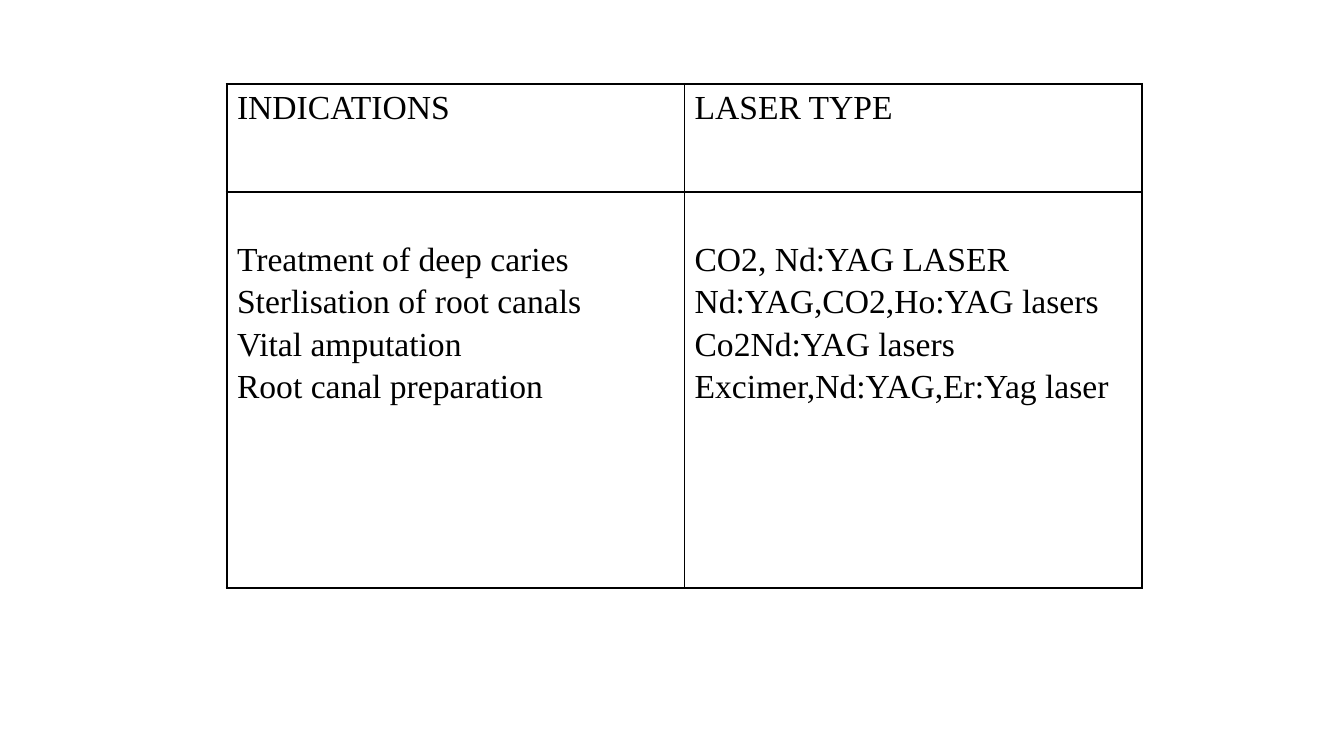
"""Build a slide with a table of laser types by dental indication."""
import pptx
import pptx.dml.color
import pptx.oxml
import pptx.oxml.ns
import pptx.util

Cm = pptx.util.Cm
Pt = pptx.util.Pt

COLOURS = {"ink": "000000"}
FONT = {"name": "Times New Roman", "size": Pt(24), "bold": False}
FRAME_WIDTH = Pt(2.25)
GRID_WIDTH = Pt(1)
LINE_GAP = Pt(3.8)
COLUMN_WIDTH = Cm(11.53)
ROW_HEIGHTS = [Cm(2.72), Cm(9.98)]
TOP_MARGINS = [Cm(0.13), Cm(1.24)]
ROWS = [
    [["INDICATIONS"], ["LASER TYPE"]],
    [
        [
            "Treatment of deep caries",
            "Sterlisation of root canals",
            "Vital amputation",
            "Root canal preparation",
        ],
        [
            "CO2, Nd:YAG LASER",
            "Nd:YAG,CO2,Ho:YAG lasers",
            "Co2Nd:YAG lasers",
            "Excimer,Nd:YAG,Er:Yag laser",
        ],
    ],
]


def set_attributes(target, values):
    """Set each named value on the target."""
    for name, value in values.items():
        setattr(target, name, value)


def write_lines(cell, lines):
    """Write one formatted paragraph for each line."""
    text_frame = cell.text_frame
    for index, line in enumerate(lines):
        paragraph = text_frame.add_paragraph() if index else text_frame.paragraphs[0]
        paragraph.space_before = LINE_GAP if index else Pt(0)
        run = paragraph.add_run()
        run.text = line
        set_attributes(run.font, FONT)
        run.font.color.rgb = pptx.dml.color.RGBColor.from_string(COLOURS["ink"])


def draw_borders(cell, widths):
    """Give the cell left, right, top and bottom lines, in that order."""
    properties = cell._tc.get_or_add_tcPr()
    for index, (side, width) in enumerate(zip("LRTB", widths)):
        line = pptx.oxml.parse_xml(
            f'<a:ln{side} {pptx.oxml.ns.nsdecls("a")} w="{int(width)}">'
            f'<a:solidFill><a:srgbClr val="{COLOURS["ink"]}"/></a:solidFill>'
            f"</a:ln{side}>"
        )
        properties.insert(index, line)


def add_laser_table(slide):
    """Add the table with a heavy outer frame and a thin inner grid."""
    row_count, column_count = len(ROWS), len(ROWS[0])
    table = slide.shapes.add_table(
        row_count, column_count, Cm(5.72), Cm(2.12),
        COLUMN_WIDTH * column_count, sum(ROW_HEIGHTS),
    ).table
    set_attributes(table, {"first_row": False, "horz_banding": False})
    for column in table.columns:
        column.width = COLUMN_WIDTH
    for row_index, row in enumerate(ROWS):
        table.rows[row_index].height = ROW_HEIGHTS[row_index]
        for column_index, lines in enumerate(row):
            cell = table.cell(row_index, column_index)
            cell.margin_top = TOP_MARGINS[row_index]
            cell.fill.background()
            write_lines(cell, lines)
            on_frame = [
                column_index == 0,
                column_index == column_count - 1,
                row_index == 0,
                row_index == row_count - 1,
            ]
            draw_borders(cell, [FRAME_WIDTH if edge else GRID_WIDTH for edge in on_frame])


def main():
    """Create the presentation and save it."""
    presentation = pptx.Presentation()
    set_attributes(presentation, {"slide_width": Cm(33.87), "slide_height": Cm(19.05)})
    slide = presentation.slides.add_slide(presentation.slide_layouts[6])
    add_laser_table(slide)
    presentation.save("out.pptx")


if __name__ == "__main__":
    main()
